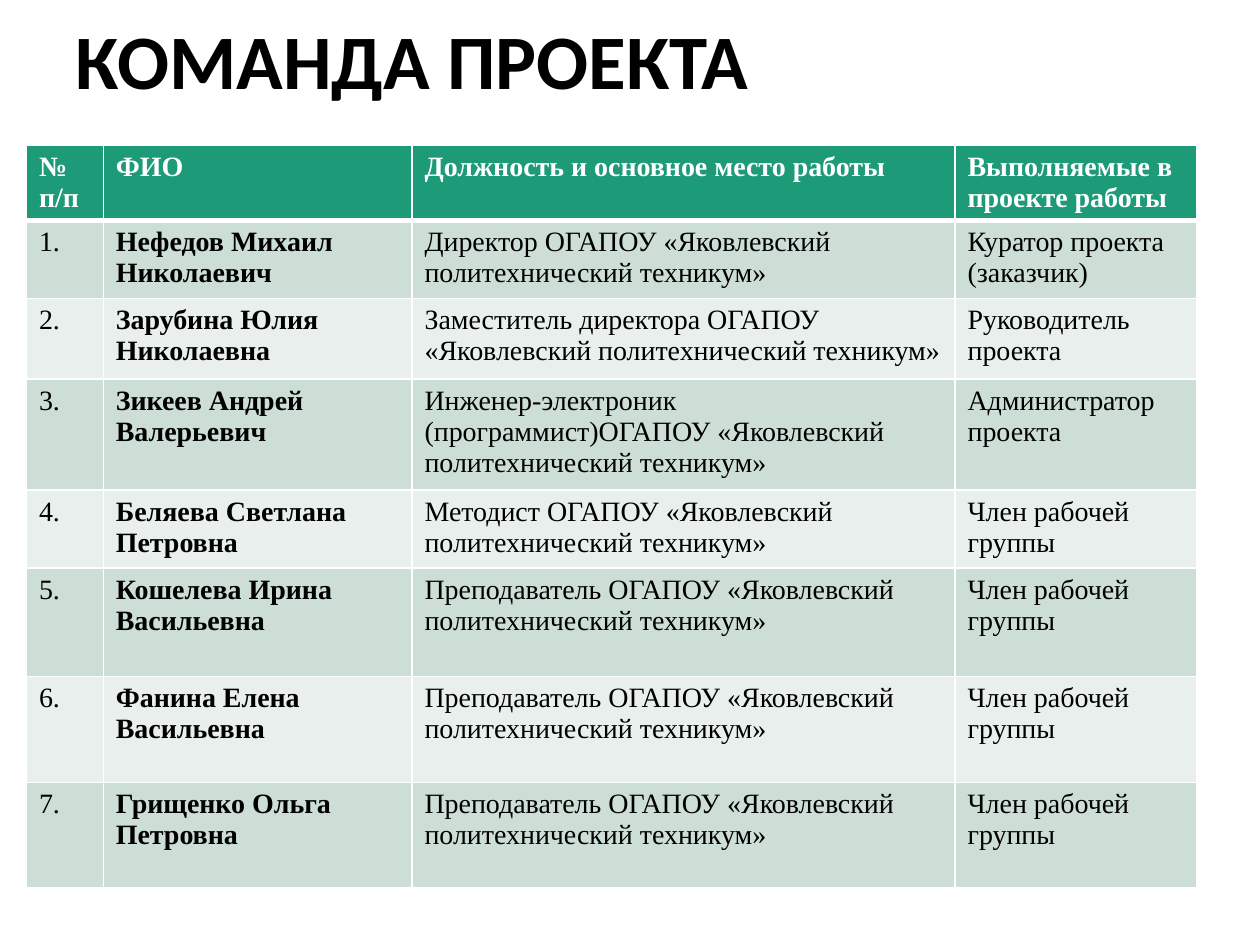
from lxml.etree import SubElement
from pptx import Presentation
from pptx.dml.color import RGBColor
from pptx.enum.text import MSO_ANCHOR, PP_ALIGN
from pptx.oxml.ns import qn
from pptx.util import Inches, Pt

BLACK = RGBColor(0x00, 0x00, 0x00)
WHITE = RGBColor(0xFF, 0xFF, 0xFF)
GREEN = RGBColor(0x1D, 0x9A, 0x78)
BANDS = [RGBColor(0xCD, 0xDE, 0xD6), RGBColor(0xE8, 0xEF, 0xEC)]

COLLEGE = "ОГАПОУ «Яковлевский политехнический техникум»"
TEACHER = f"Преподаватель {COLLEGE}"
MEMBER = "Член рабочей группы"
HEADINGS = ["№ п/п", "ФИО", "Должность и основное место работы",
            "Выполняемые в проекте работы"]
TEAM = [
    ("Нефедов Михаил Николаевич", f"Директор {COLLEGE}",
     "Куратор проекта (заказчик)"),
    ("Зарубина Юлия Николаевна", f"Заместитель директора {COLLEGE}",
     "Руководитель проекта"),
    ("Зикеев Андрей Валерьевич",
     f"Инженер-электроник (программист){COLLEGE}", "Администратор проекта"),
    ("Беляева Светлана Петровна", f"Методист {COLLEGE}", MEMBER),
    ("Кошелева Ирина Васильевна", TEACHER, MEMBER),
    ("Фанина Елена Васильевна", TEACHER, MEMBER),
    ("Грищенко Ольга Петровна", TEACHER, MEMBER),
]
COLUMN_WIDTHS = [0.61, 2.45, 4.31, 1.92]
ROW_HEIGHTS = [0.6, 0.62, 0.64, 0.88, 0.62, 0.86, 0.84, 0.84]
NAME_COLUMN = 1


def format_font(font, color, **values):
    for attribute, value in values.items():
        setattr(font, attribute, value)
    font.color.rgb = color


def add_title(slide, text):
    title = slide.shapes.title
    title.left, title.top = Inches(0.5), Inches(0.13)
    title.width, title.height = Inches(9), Inches(0.77)
    title.text_frame.text = text
    title.text_frame.vertical_anchor = MSO_ANCHOR.MIDDLE
    heading = title.text_frame.paragraphs[0]
    heading.alignment = PP_ALIGN.LEFT
    heading.line_spacing = 0.9
    format_font(heading.runs[0].font, BLACK,
                name="Calibri", size=Pt(44), bold=True)


def set_borders(cell, **widths):
    """Draw white cell borders; widths are points keyed by L, R, T and B."""
    properties = cell._tc.get_or_add_tcPr()
    for side, width in widths.items():
        line = SubElement(properties, qn(f"a:ln{side}"), w=str(Pt(width)))
        fill = SubElement(line, qn("a:solidFill"))
        SubElement(fill, qn("a:srgbClr"), val=str(WHITE))


def fill_cell(cell, text, row, column):
    is_header = row == 0
    # Borders must come before the fill in the cell properties.
    set_borders(cell, L=1, R=1, T=3 if row == 1 else 1,
                B=3 if is_header else 1)
    cell.fill.solid()
    cell.fill.fore_color.rgb = GREEN if is_header else BANDS[(row - 1) % 2]
    cell.text = text
    format_font(cell.text_frame.paragraphs[0].runs[0].font,
                WHITE if is_header else BLACK,
                name="Times New Roman", size=Pt(16),
                bold=is_header or column == NAME_COLUMN)


def add_team_table(slide):
    rows = [HEADINGS] + [(f"{number}.", *member)
                         for number, member in enumerate(TEAM, 1)]
    table = slide.shapes.add_table(
        len(rows), len(HEADINGS), Inches(0.21), Inches(1.15),
        Inches(sum(COLUMN_WIDTHS)), Inches(sum(ROW_HEIGHTS))).table
    for column, width in zip(table.columns, COLUMN_WIDTHS):
        column.width = Inches(width)
    for row, height in zip(table.rows, ROW_HEIGHTS):
        row.height = Inches(height)
    for row, texts in enumerate(rows):
        for column, text in enumerate(texts):
            fill_cell(table.cell(row, column), text, row, column)


def main():
    presentation = Presentation()
    presentation.slide_width = Inches(10)
    presentation.slide_height = Inches(7.5)
    title_only = presentation.slide_layouts.get_by_name("Title Only")
    slide = presentation.slides.add_slide(title_only)
    add_title(slide, "КОМАНДА ПРОЕКТА")
    add_team_table(slide)
    presentation.save("out.pptx")


if __name__ == "__main__":
    main()
